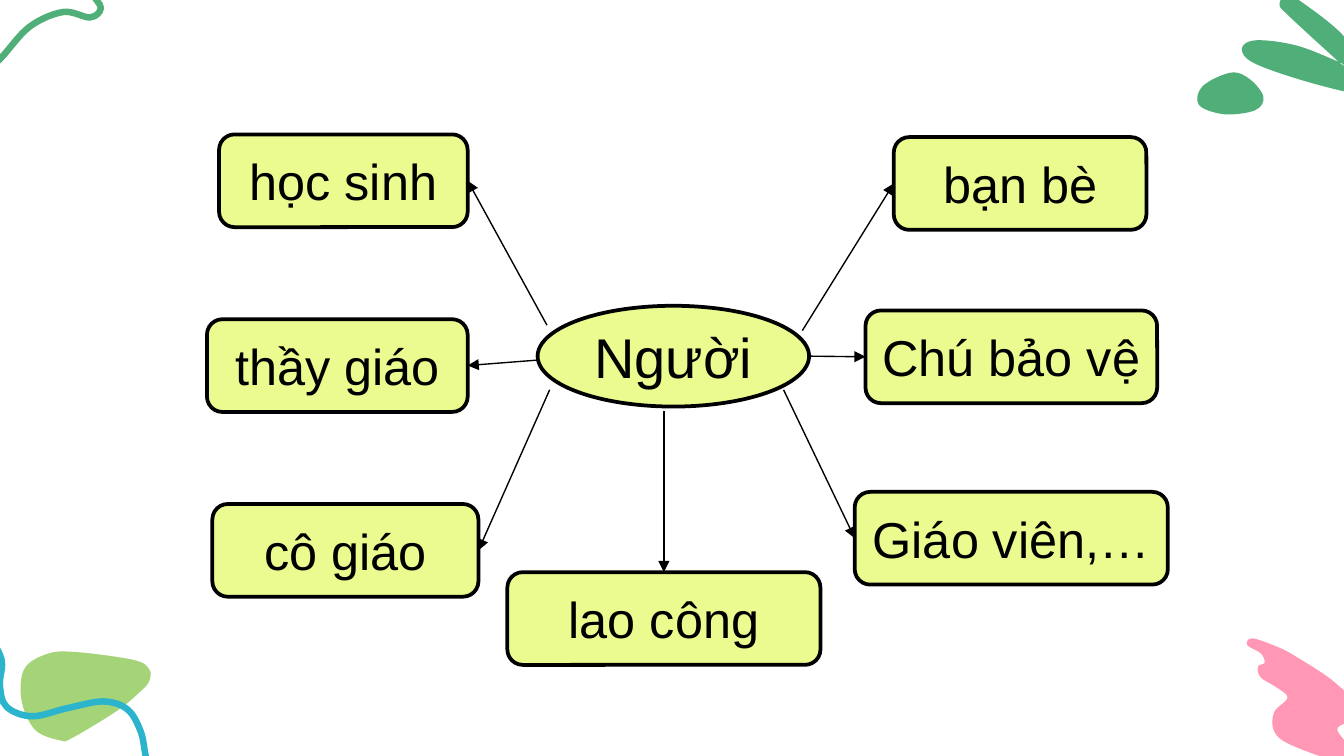
from lxml.etree import SubElement
from pptx import Presentation
from pptx.dml.color import RGBColor
from pptx.enum.shapes import MSO_CONNECTOR, MSO_SHAPE
from pptx.enum.text import MSO_ANCHOR, PP_ALIGN
from pptx.oxml.ns import qn
from pptx.util import Inches, Pt

COLORS = {
    "card": "ECFB8F",
    "ink": "000000",
    "green": "50AF78",
    "lime": "A4D378",
    "blue": "2BB4CC",
    "pink": "FF97B5",
}
COLUMNS = 100
SLIDE_WIDTH = Inches(10)
SLIDE_HEIGHT = Inches(5.625)
CELL = SLIDE_WIDTH / COLUMNS
CARD_HEIGHT = 6.9
TOP, LEFT, RIGHT = 0, 1, 3

TOPICS = [
    ("học sinh", (1.3, 0), 18.5, RIGHT, (25.7, 14.2)),
    ("thầy giáo", (0.4, 13.75), 19.4, RIGHT, (27.5, 16.6)),
    ("cô giáo", (0.8, 27.5), 19.8, RIGHT, (25.9, 19)),
    ("bạn bè", (51.5, 0.2), 18.8, LEFT, (44.7, 14.6)),
    ("Chú bảo vệ", (49.4, 13.1), 21.7, LEFT, (45.2, 16.5)),
    ("Giáo viên,…", (48.6, 26.6), 23.3, LEFT, (43.3, 19)),
    ("lao công", (22.75, 32.57), 23.3, TOP, (34.4, 20.6)),
]

LIME_LEAF = [
    (4.5, 9.1), (5.4, 8.9), (8.7, 6.9), (10.4, 5.5), (11.1, 4.7), (11.1, 3.8),
    (9.9, 3.1), (5.4, 2.5), (3.4, 2.7), (1.8, 3.8), (1.6, 6.1), (2.6, 8.3),
]
BLUE_RIBBON = [
    (-5.2, 5.6), (-4, 6.2), (-2.6, 7.1), (-1.8, 5.7), (-2.6, 3), (-1.2, 1.2),
    (0.1, 3), (0, 5), (0.5, 6.6), (2.4, 7.3), (5, 6.7), (7.7, 6.2),
    (9.5, 6.8), (10.5, 8.5), (11.1, 10.9), (12.8, 11.8), (14.4, 11.2),
    (13.8, 10.6), (12, 11.3), (10.3, 12.5), (9.4, 14.5),
]
PINK_SPLASH = [
    (3.2, 1.5), (5.2, 2.2), (6.5, 2.9), (9.1, 4.6), (11, 6.5), (10.8, 7.5),
    (10.1, 7.8), (9.5, 8.3), (10.3, 9.5), (10.5, 10.5), (9.6, 10.7),
    (6, 9.4), (4.8, 8.4), (4.8, 7), (5.8, 5.9), (4.9, 5.1), (3.8, 4.4),
    (3.6, 3.6), (4.1, 3.3), (3.8, 2.6), (2.8, 2),
]
GREEN_LEAVES = [
    (7.7, -0.5), (8.2, -0.3), (11.6, 2.3), (13.9, 5.2), (14.6, 6.6),
    (13.6, 7.1), (9.3, 6.1), (5.3, 4.7), (4.4, 3.6), (5.5, 3), (8.5, 3.4),
    (11.6, 4.6), (11.6, 4.6), (7.8, 1.1), (7.2, 0.3),
]
GREEN_PEBBLE = [
    (3.6, 5.4), (5, 5.9), (6, 7.2), (5.4, 8.2), (3.1, 8.5), (1.2, 7.8), (1.5, 6.4),
]
GREEN_RIBBON = [
    (-17.4, -1.7), (-14.8, 1.2), (-12.6, 3.8), (-12.4, 5.8), (-13.2, 6.2),
    (-13.3, 5), (-11.9, 4.6), (-9.8, 5.4), (-7.5, 6.3), (-4.3, 6.9),
    (-1.8, 6), (0, 4.4), (2.2, 2), (4.7, 0.9), (6.7, 1.3), (7.5, 0.6),
    (6.8, -0.6), (6.2, -2.7),
]


def cells(count):
    return round(count * CELL)


def color(name):
    return RGBColor.from_string(COLORS[name])


def round_corners(shape, closed):
    outline = shape._element.find(".//" + qn("a:path"))
    knots = [(int(knot.get("x")), int(knot.get("y"))) for knot in outline.iter(qn("a:pt"))]
    first, last = (knots[-2], knots[1]) if closed else (knots[0], knots[-1])
    padded = [first, *knots, last]
    spans = zip(padded, padded[1:], padded[2:], padded[3:])
    for segment, (before, start, end, after) in zip(outline.findall(qn("a:lnTo")), spans):
        leaving = [s + (e - b) / 6 for b, s, e in zip(before, start, end)]
        arriving = [e - (a - s) / 6 for s, e, a in zip(start, end, after)]
        curve = SubElement(outline, qn("a:cubicBezTo"))
        for x, y in (leaving, arriving, end):
            SubElement(curve, qn("a:pt"), x=str(round(x)), y=str(round(y)))
        outline.replace(segment, curve)


def add_curve(slide, origin, knots, color_name, closed=True):
    route = [*knots, knots[0]] if closed else knots
    points = [(cells(origin[0] + column), cells(origin[1] + row)) for column, row in route]
    builder = slide.shapes.build_freeform(*points[0])
    builder.add_line_segments(points[1:], close=closed)
    shape = builder.convert_to_shape()
    round_corners(shape, closed)
    shape.shadow.inherit = False
    if closed:
        shape.fill.solid()
        shape.fill.fore_color.rgb = color(color_name)
        shape.line.fill.background()
    else:
        shape.fill.background()
        shape.line.color.rgb = color(color_name)
        shape.line.width = Pt(3.5)


def add_bubble(slide, preset, box, text, size):
    shape = slide.shapes.add_shape(preset, *map(cells, box))
    shape.shadow.inherit = False
    shape.fill.solid()
    shape.fill.fore_color.rgb = color("card")
    shape.line.color.rgb = color("ink")
    shape.line.width = Pt(2)
    frame = shape.text_frame
    frame.text = text
    frame.word_wrap = True
    frame.vertical_anchor = MSO_ANCHOR.MIDDLE
    frame.margin_left = frame.margin_right = cells(0.75)
    frame.margin_top = frame.margin_bottom = cells(0.38)
    paragraph = frame.paragraphs[0]
    paragraph.alignment = PP_ALIGN.CENTER
    font = paragraph.runs[0].font
    font.name = "Arial"
    font.size = Pt(size)
    font.color.rgb = color("ink")
    return shape


def add_arrow(slide, start, target, side):
    x, y = map(cells, start)
    connector = slide.shapes.add_connector(MSO_CONNECTOR.STRAIGHT, x, y, x, y)
    connector.end_connect(target, side)
    connector.line.color.rgb = color("ink")
    connector.line.width = Pt(0.75)
    SubElement(connector.line._get_or_add_ln(), qn("a:tailEnd"), type="triangle")
    SubElement(connector._element.spPr, qn("a:effectLst"))


def add_decorations(slide, width, height):
    bottom = height - 10.25
    add_curve(slide, (0, bottom), LIME_LEAF, "lime")
    add_curve(slide, (0, bottom), BLUE_RIBBON, "blue", closed=False)
    add_curve(slide, (width - 10, bottom), PINK_SPLASH, "pink")
    add_curve(slide, (width - 12, 0), GREEN_LEAVES, "green")
    add_curve(slide, (0, 0), GREEN_RIBBON, "green", closed=False)
    add_curve(slide, (width - 12, 0), GREEN_PEBBLE, "green")


def add_mind_map(slide, left, top):
    for text, (column, row), width, side, (start_column, start_row) in TOPICS:
        box = (left + column, top + row, width, CARD_HEIGHT)
        card = add_bubble(slide, MSO_SHAPE.ROUNDED_RECTANGLE, box, text, 27)
        add_arrow(slide, (left + start_column, top + start_row), card, side)
    center = (left + 25, top + 12.75, 20.2, 7.5)
    add_bubble(slide, MSO_SHAPE.OVAL, center, "Người", 30)


def main():
    presentation = Presentation()
    presentation.slide_width = SLIDE_WIDTH
    presentation.slide_height = SLIDE_HEIGHT
    slide = presentation.slides.add_slide(presentation.slide_layouts[6])
    add_decorations(slide, COLUMNS, SLIDE_HEIGHT / CELL)
    add_mind_map(slide, 15, 10)
    presentation.save("out.pptx")


if __name__ == "__main__":
    main()
